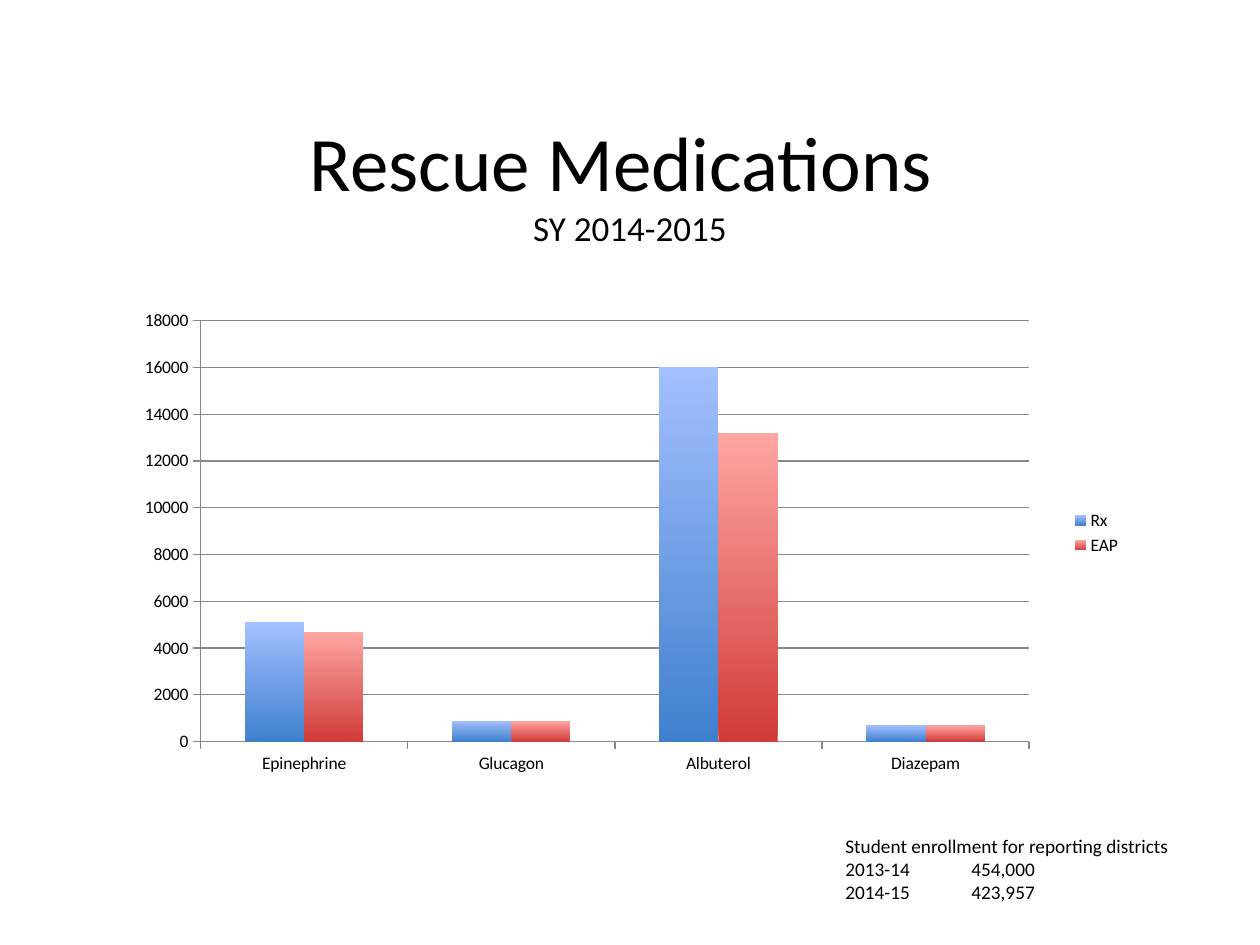
import pptx
import pptx.chart.data
import pptx.dml.color
import pptx.enum.chart
import pptx.enum.text
import pptx.oxml
import pptx.oxml.ns
import pptx.util

PX = 914400 / 126
FONT = "Calibri"
COLORS = {
    "text": "000000",
    "grid": "878787",
    "rx_dark": "3F80CD",
    "rx_light": "A3C0FF",
    "eap_dark": "D03C38",
    "eap_light": "FFA6A3",
}
CATEGORIES = ["Epinephrine", "Glucagon", "Albuterol", "Diazepam"]
SERIES = {
    "Rx": [5100, 900, 16000, 700],
    "EAP": [4700, 900, 13200, 700],
}
PLOT_LAYOUT = {"x": 0.074, "y": 0.065, "w": 0.822, "h": 0.863}


def emu(box):
    return [pptx.util.Emu(round(length * PX)) for length in box]


def color(name):
    return pptx.dml.color.RGBColor.from_string(COLORS[name])


def set_font(font, size):
    font.name = FONT
    font.size = pptx.util.Pt(size)
    font.color.rgb = color("text")


def add_title(page, box):
    frame = page.shapes.add_textbox(*emu(box)).text_frame
    frame.word_wrap = True
    frame.vertical_anchor = pptx.enum.text.MSO_ANCHOR.MIDDLE
    para = frame.paragraphs[0]
    para.alignment = pptx.enum.text.PP_ALIGN.CENTER
    heading = para.add_run()
    heading.text = "Rescue Medications "
    set_font(heading.font, 44)
    para.add_line_break()
    year = para.add_run()
    year.text = "SY 2014-2015"
    set_font(year.font, 20)


def set_plot_layout(chart):
    area = chart._chartSpace.chart.plotArea
    for old in area.findall(pptx.oxml.ns.qn("c:layout")):
        area.remove(old)
    sizes = "".join(f'<c:{key} val="{value}"/>' for key, value in PLOT_LAYOUT.items())
    area.insert(0, pptx.oxml.parse_xml(
        f'<c:layout {pptx.oxml.ns.nsdecls("c")}><c:manualLayout>'
        '<c:layoutTarget val="inner"/><c:xMode val="edge"/><c:yMode val="edge"/>'
        f'{sizes}</c:manualLayout></c:layout>'))


def add_medication_chart(page, box):
    data = pptx.chart.data.CategoryChartData()
    data.categories = CATEGORIES
    for name, values in SERIES.items():
        data.add_series(name, values)
    kind = pptx.enum.chart.XL_CHART_TYPE.COLUMN_CLUSTERED
    chart = page.shapes.add_chart(kind, *emu(box), data).chart
    set_font(chart.font, 10)
    chart.has_title = False
    chart.has_legend = True
    chart.legend.position = pptx.enum.chart.XL_LEGEND_POSITION.RIGHT
    chart.legend.include_in_layout = False
    set_plot_layout(chart)

    chart.value_axis.has_major_gridlines = True
    for axis in (chart.category_axis, chart.value_axis):
        axis.major_tick_mark = pptx.enum.chart.XL_TICK_MARK.OUTSIDE
        axis.format.line.color.rgb = color("grid")
    chart.value_axis.major_gridlines.format.line.color.rgb = color("grid")
    chart.value_axis.minimum_scale = 0
    chart.value_axis.maximum_scale = 18000
    chart.value_axis.major_unit = 2000

    plot = chart.plots[0]
    plot.vary_by_categories = False
    plot.gap_width = 150
    plot.overlap = 0
    for series in plot.series:
        fill = series.format.fill
        fill.gradient()
        fill.gradient_angle = 90
        for stop, shade in zip(fill.gradient_stops, ("dark", "light")):
            stop.color.rgb = color(f"{series.name.lower()}_{shade}")
        series.format.line.fill.background()


def add_enrollment_note(page, box):
    frame = page.shapes.add_textbox(*emu(box)).text_frame
    frame.word_wrap = False
    frame.auto_size = pptx.enum.text.MSO_AUTO_SIZE.SHAPE_TO_FIT_TEXT
    frame.text = ("Student enrollment for reporting districts\n"
                  "2013-14\t454,000\n2014-15\t423,957")
    for para in frame.paragraphs:
        set_font(para.font, 11)


def main():
    deck = pptx.Presentation()
    deck.slide_width = pptx.util.Inches(10)
    deck.slide_height = pptx.util.Inches(7.5)
    page = deck.slides.add_slide(deck.slide_layouts[6])
    add_title(page, (126, 102, 1008, 159))
    add_medication_chart(page, (126, 289, 1008, 488))
    add_enrollment_note(page, (833, 828, 370, 83))
    deck.save("out.pptx")


if __name__ == "__main__":
    main()
